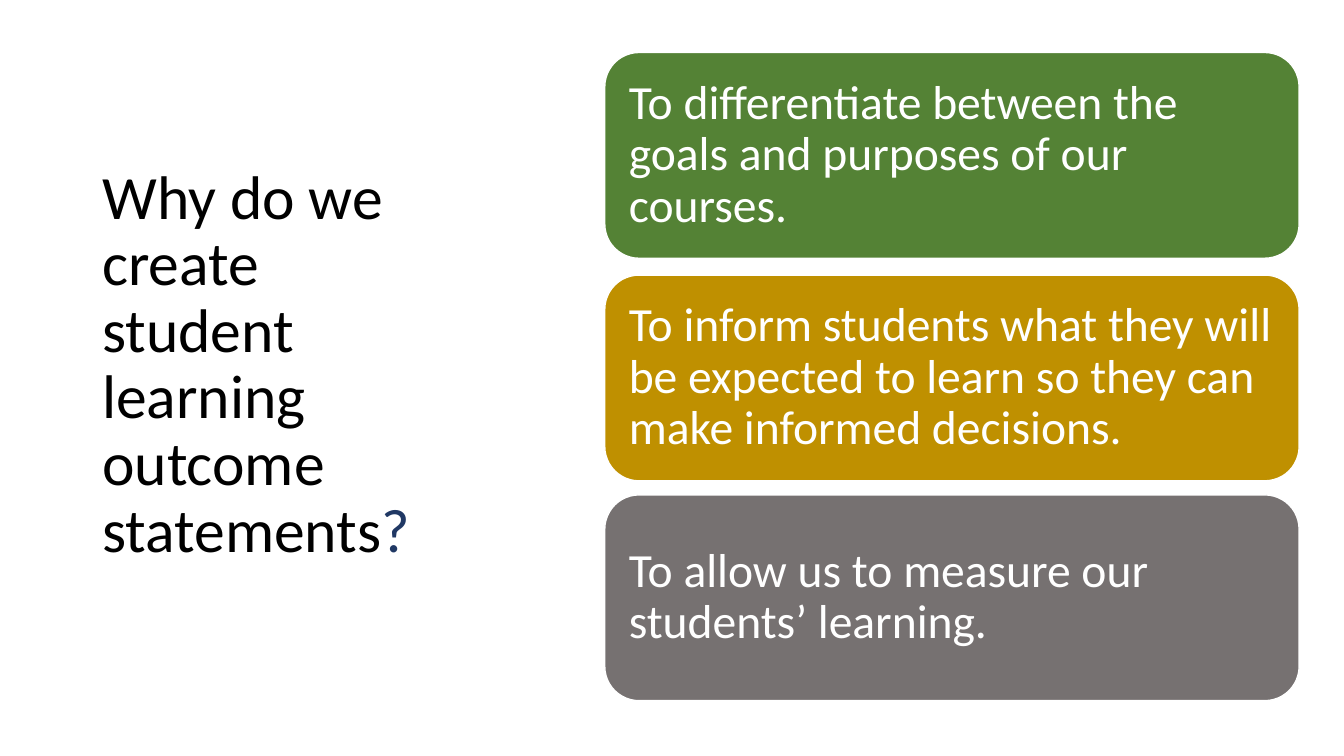
from dataclasses import dataclass

from pptx import Presentation
from pptx import util as u
from pptx.dml.color import RGBColor
from pptx.enum import shapes, text

FONT = "Calibri"
HUES = {
    "black": "000000",
    "white": "FFFFFF",
    "navy": "203864",
    "green": "548235",
    "gold": "BF9000",
    "gray": "767171",
}


@dataclass
class Card:
    top: float
    hue: str
    words: str


CARDS = [
    Card(37.5, "green", "To differentiate between the goals and purposes of our courses."),
    Card(196.5, "gold", "To inform students what they will be expected to learn so they can make informed decisions."),
    Card(353.5, "gray", "To allow us to measure our students’ learning."),
]


def color(hue: str) -> RGBColor:
    return RGBColor.from_string(HUES[hue])


def style(para, size: float, hue: str) -> None:
    para.alignment = text.PP_ALIGN.LEFT
    para.line_spacing = 0.9
    para.font.name = FONT
    para.font.size = u.Pt(size)
    para.font.color.rgb = color(hue)


def draw_title(slide) -> None:
    box = slide.shapes.add_textbox(u.Pt(66), u.Pt(94.5), u.Pt(252), u.Pt(333.5))
    frame = box.text_frame
    frame.word_wrap = True
    frame.vertical_anchor = text.MSO_ANCHOR.MIDDLE
    para = frame.paragraphs[0]
    style(para, 44, "black")
    para.add_run().text = "Why do we create student learning outcome statements"
    mark = para.add_run()
    mark.text = "?"
    mark.font.color.rgb = color("navy")


def draw_card(slide, card: Card) -> None:
    box = slide.shapes.add_shape(
        shapes.MSO_SHAPE.ROUNDED_RECTANGLE,
        u.Pt(432), u.Pt(card.top), u.Pt(496), u.Pt(147),
    )
    box.shadow.inherit = False
    box.fill.solid()
    box.fill.fore_color.rgb = color(card.hue)
    box.line.color.rgb = color("white")
    box.line.width = u.Pt(1)
    frame = box.text_frame
    frame.word_wrap = True
    frame.vertical_anchor = text.MSO_ANCHOR.MIDDLE
    frame.margin_left = frame.margin_right = u.Pt(10)
    frame.margin_top = frame.margin_bottom = u.Pt(10)
    para = frame.paragraphs[0]
    para.text = card.words
    style(para, 34, "white")


def main() -> None:
    deck = Presentation()
    deck.slide_width = u.Pt(960)
    deck.slide_height = u.Pt(540)
    slide = deck.slides.add_slide(deck.slide_layouts[6])
    draw_title(slide)
    for card in CARDS:
        draw_card(slide, card)
    deck.save("out.pptx")


if __name__ == "__main__":
    main()
